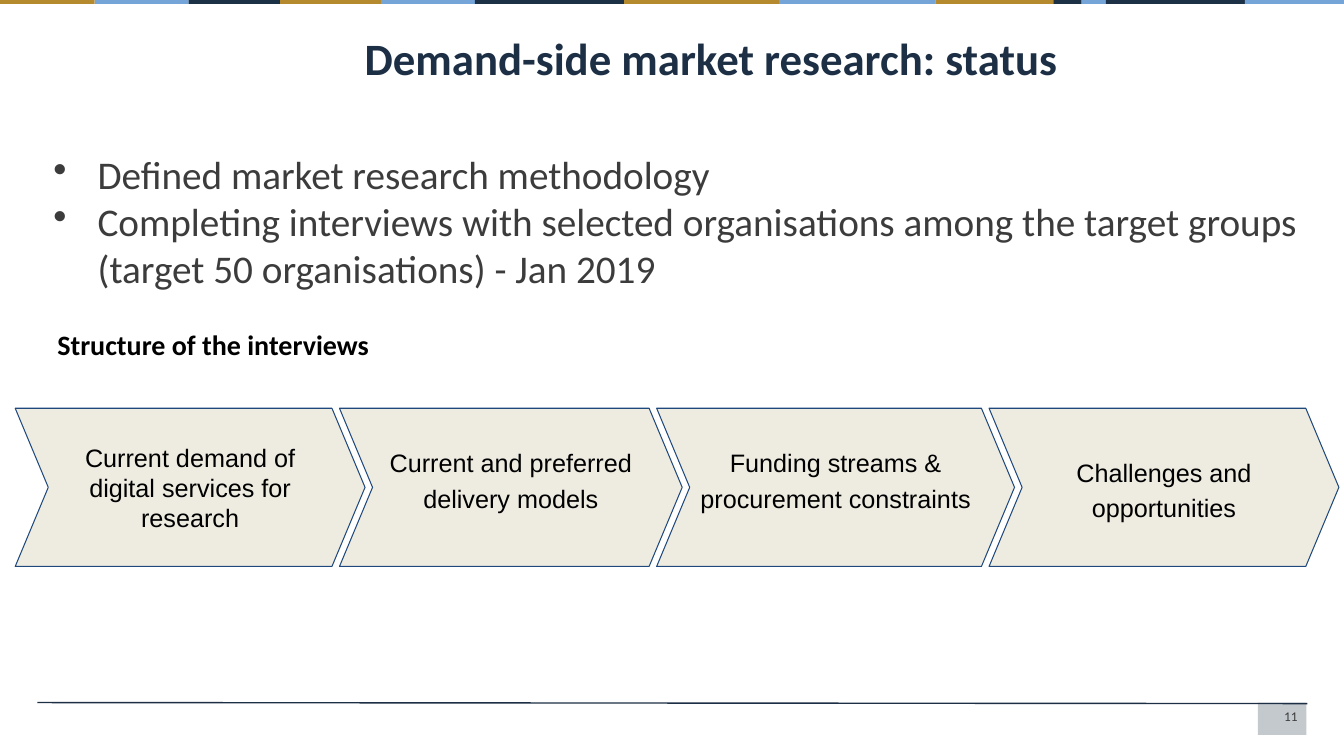
from itertools import pairwise

from lxml import etree
from pptx import Presentation
from pptx.dml.color import RGBColor
from pptx.enum.shapes import MSO_CONNECTOR, MSO_SHAPE
from pptx.enum.text import MSO_ANCHOR, PP_ALIGN
from pptx.oxml.ns import qn
from pptx.util import Inches, Pt

RECTANGLE, CHEVRON = MSO_SHAPE.RECTANGLE, MSO_SHAPE.CHEVRON
STRAIGHT = MSO_CONNECTOR.STRAIGHT
TOP, MIDDLE = MSO_ANCHOR.TOP, MSO_ANCHOR.MIDDLE
LEFT, CENTER, RIGHT = PP_ALIGN.LEFT, PP_ALIGN.CENTER, PP_ALIGN.RIGHT

THEME = {
    "navy": RGBColor.from_string("1D2F45"),
    "strip navy": RGBColor.from_string("1C3046"),
    "gold": RGBColor.from_string("B5892D"),
    "blue": RGBColor.from_string("75A5D8"),
    "grey": RGBColor.from_string("3C3C3C"),
    "black": RGBColor.from_string("000000"),
    "cream": RGBColor.from_string("EEECE1"),
    "outline": RGBColor.from_string("1F497D"),
    "text font": "Calibri", "step font": "Arial",
    "title size": 32, "body size": 28, "heading size": 20,
    "step size": 18, "number size": 9.5,
}

deck = Presentation()
deck.slide_width, deck.slide_height = Inches(13.33), Inches(7.5)
page = deck.slides.add_slide(deck.slide_layouts[6])
column, row = deck.slide_width / 100, deck.slide_height / 100


def add_box(kind, left, top, width, height, fill=None):
    """Add a text box (kind None) or a filled shape, placed in percent of the slide."""
    place = [round(left * column), round(top * row), round(width * column), round(height * row)]
    if kind is None:
        return page.shapes.add_textbox(*place)
    box = page.shapes.add_shape(kind, *place)
    box.shadow.inherit = False
    box.fill.solid()
    box.fill.fore_color.rgb = THEME[fill]
    box.line.fill.background()
    return box


def write(box, lines, size, color, font="text font", bold=False, align=LEFT,
          anchor=TOP, spacing=None, bullet=None, padding=0.1):
    frame = box.text_frame
    frame.word_wrap = True
    frame.vertical_anchor = anchor
    frame.margin_left = frame.margin_right = Inches(0.1)
    frame.margin_top = frame.margin_bottom = Inches(padding)
    frame.text = "\n".join(lines)
    for para in frame.paragraphs:
        para.alignment = align
        para.line_spacing = spacing
        if bullet:
            properties = para._p.get_or_add_pPr()
            properties.set("marL", str(Inches(0.5)))
            properties.set("indent", str(Inches(-0.44)))
            etree.SubElement(properties, qn("a:buChar")).set("char", bullet)
        para.font.name = THEME[font]
        para.font.size = Pt(THEME[size])
        para.font.bold = bold
        para.font.color.rgb = THEME[color]


# Coloured strip along the top edge
strip_edges = [0, 7.05, 14.03, 20.85, 28.35, 35.33, 46.43, 57.98,
               69.6, 78.38, 80.48, 82.28, 92.63, 100]
strip_colors = ["gold", "blue", "strip navy", "gold", "blue", "strip navy", "gold",
                "blue", "gold", "strip navy", "blue", "strip navy", "blue"]
for (start, end), color in zip(pairwise(strip_edges), strip_colors):
    add_box(RECTANGLE, start, 0, end - start, 0.53, color)

# Footer: tinted square, rule and page number
number_square = add_box(RECTANGLE, 93.6, 92.93, 3.6, 4.27, "navy")
square_color = number_square.fill._xPr.find(qn("a:solidFill"))[0]
etree.SubElement(square_color, qn("a:alpha")).set("val", "26000")

footer_rule = page.shapes.add_connector(
    STRAIGHT, round(97.28 * column), round(93.07 * row),
    round(2.78 * column), round(92.93 * row))
footer_rule.line.color.rgb = THEME["navy"]
footer_rule.line.width = Pt(1)
etree.SubElement(footer_rule._element.spPr, qn("a:effectLst"))

page_number = add_box(None, 71.7, 93.07, 25.58, 4.13)
write(page_number, ["11"], "number size", "grey", align=RIGHT, padding=0.05)

# Title and bullets
title = add_box(None, 26.4, 2.8, 70.8, 12)
write(title, ["Demand-side market research: status"], "title size", "navy", bold=True)

body = add_box(None, 2.78, 18.53, 94.5, 70.8)
write(body, [
    "Defined market research methodology",
    "Completing interviews with selected organisations among the target groups "
    "(target 50 organisations) - Jan 2019",
], "body size", "grey", bullet="•")

# Interview structure: heading and a chain of overlapping chevrons
heading = add_box(None, 3.53, 42, 77.1, 16)
write(heading, ["Structure of the interviews"], "heading size", "black", bold=True)

# Each step: text, width, line spacing, bottom margin in inches
steps = [
    ("Current demand of digital services for research", 26.03, 1.0, 0.1),
    ("Current and preferred delivery models", 25.5, 1.2, 0.3),
    ("Funding streams & procurement constraints", 26.63, 1.2, 0.3),
    ("Challenges and opportunities", 26.03, 1.15, 0.1),
]
step_left, step_overlap = 1.13, 1.9
for label, width, spacing, bottom in steps:
    step = add_box(CHEVRON, step_left, 54, width, 20.93, "cream")
    step.adjustments[0] = 0.209
    step.line.color.rgb = THEME["outline"]
    step.line.width = Pt(0.75)
    write(step, [label], "step size", "black", font="step font",
          align=CENTER, anchor=MIDDLE, spacing=spacing)
    step.text_frame.margin_bottom = Inches(bottom)
    step_left += width - step_overlap

deck.save("out.pptx")
